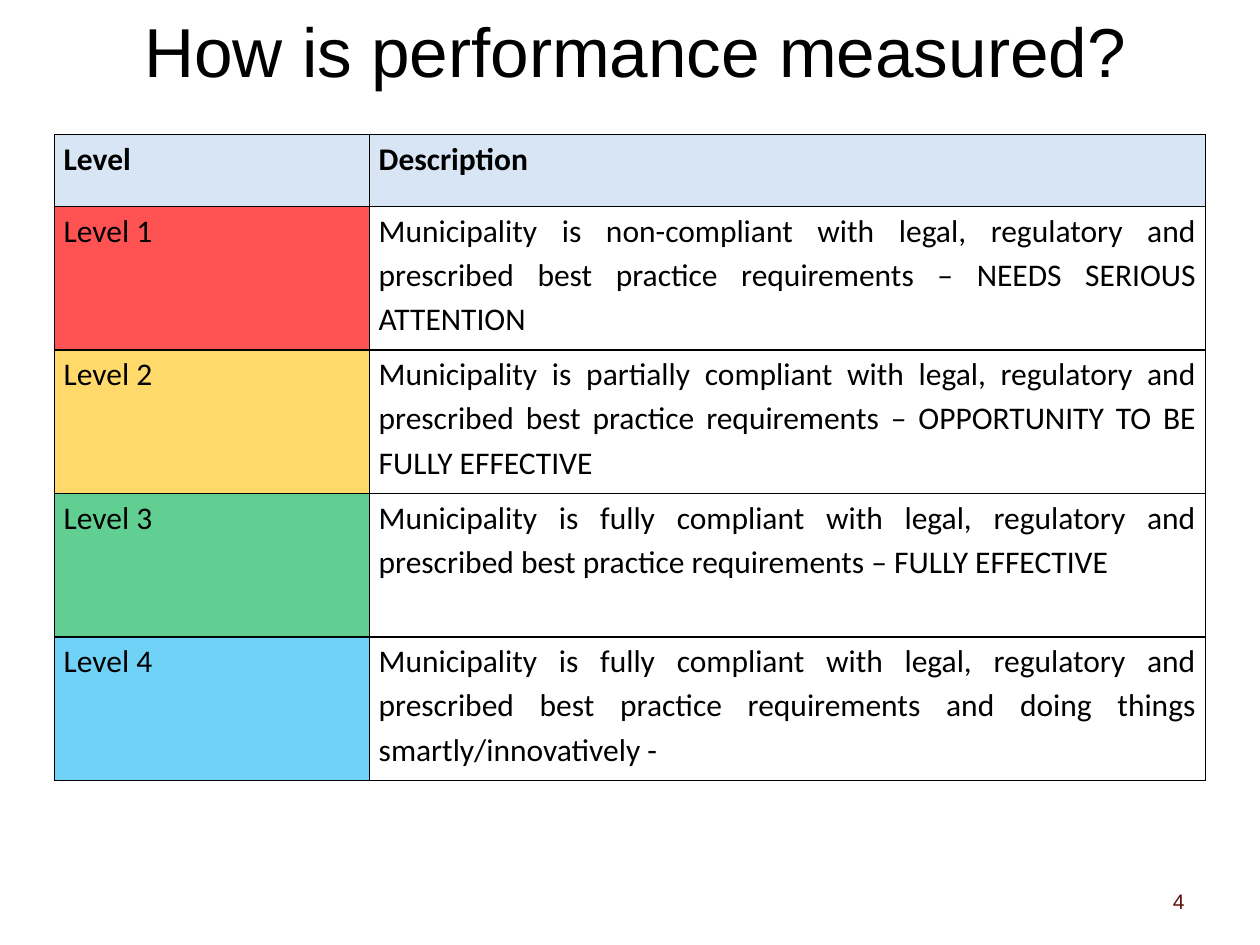
"""Build the slide that explains the four performance levels."""
from typing import NamedTuple

from lxml.etree import SubElement
from pptx import Presentation
from pptx.dml.color import RGBColor
from pptx.enum.text import MSO_ANCHOR as Anchor, PP_ALIGN as Align
from pptx.oxml.ns import qn
from pptx.util import Pt


class Level(NamedTuple):
    name: str
    description: str
    color: str
    opacity: int


REQUIREMENTS = "compliant with legal, regulatory and prescribed best practice requirements"
HEADER_COLOR, HEADER_OPACITY = "C6D9F1", 67
LEVELS = [
    Level("Level 1", f"Municipality is non-{REQUIREMENTS} – NEEDS SERIOUS ATTENTION", "FF0000", 68),
    Level("Level 2", f"Municipality is partially {REQUIREMENTS} – OPPORTUNITY TO BE FULLY EFFECTIVE", "FFC000", 59),
    Level("Level 3", f"Municipality is fully {REQUIREMENTS} – FULLY EFFECTIVE", "00B050", 62),
    Level("Level 4", f"Municipality is fully {REQUIREMENTS} and doing things smartly/innovatively - ", "00B0F0", 56),
]
COLUMN_WIDTHS = [180, 478]
ROW_HEIGHTS = [41] + [82] * len(LEVELS)


def rgb(color: str) -> RGBColor:
    return RGBColor.from_string(color)


def style_text(frame, font_name: str, size: float, color: str, align: Align, bold: bool = False) -> None:
    frame.word_wrap = True
    paragraph = frame.paragraphs[0]
    paragraph.alignment = align
    for run in paragraph.runs:
        run.font.name = font_name
        run.font.size = Pt(size)
        run.font.bold = bold
        run.font.color.rgb = rgb(color)


def place(box, left: float, top: float, width: float, height: float) -> None:
    box.left, box.top, box.width, box.height = Pt(left), Pt(top), Pt(width), Pt(height)


def add_borders(cell) -> None:
    properties = cell._tc.get_or_add_tcPr()
    for side in ("a:lnL", "a:lnR", "a:lnT", "a:lnB"):
        border = SubElement(properties, qn(side), w=str(Pt(1)))
        SubElement(SubElement(border, qn("a:solidFill")), qn("a:srgbClr"), val="000000")


def fill_cell(cell, color: str, opacity: int) -> None:
    cell.fill.solid()
    cell.fill.fore_color.rgb = rgb(color)
    tint = cell._tc.tcPr.find(qn("a:solidFill")).find(qn("a:srgbClr"))
    SubElement(tint, qn("a:alpha"), val=str(opacity * 1000))


def write_cell(cell, wording: str, bold: bool = False) -> None:
    cell.margin_left = cell.margin_right = Pt(5.4)
    cell.margin_top = cell.margin_bottom = 0
    cell.text_frame.text = wording
    style_text(cell.text_frame, "Calibri", 18, "000000", Align.JUSTIFY, bold)
    paragraph = cell.text_frame.paragraphs[0]
    paragraph.line_spacing = 1.15
    paragraph.space_after = Pt(10)
    add_borders(cell)
    cell.fill.background()


def add_level_table(slide) -> None:
    grid = slide.shapes.add_table(
        len(ROW_HEIGHTS), len(COLUMN_WIDTHS), Pt(31), Pt(77), Pt(sum(COLUMN_WIDTHS)), Pt(sum(ROW_HEIGHTS))
    ).table
    grid.horz_banding = False
    for column, width in zip(grid.columns, COLUMN_WIDTHS):
        column.width = Pt(width)
    for row, height in zip(grid.rows, ROW_HEIGHTS):
        row.height = Pt(height)
    for index, heading in enumerate(("Level", "Description")):
        write_cell(grid.cell(0, index), heading, bold=True)
        fill_cell(grid.cell(0, index), HEADER_COLOR, HEADER_OPACITY)
    for index, level in enumerate(LEVELS, start=1):
        write_cell(grid.cell(index, 0), level.name)
        fill_cell(grid.cell(index, 0), level.color, level.opacity)
        write_cell(grid.cell(index, 1), level.description)


def main() -> None:
    deck = Presentation()
    deck.slide_width, deck.slide_height = Pt(720), Pt(540)
    slide = deck.slides.add_slide(deck.slide_layouts[5])

    title = slide.shapes.title
    place(title, 20, 2, 686, 53)
    title.text_frame.text = "How is performance measured?"
    title.text_frame.vertical_anchor = Anchor.MIDDLE
    style_text(title.text_frame, "Arial", 39.6, "000000", Align.CENTER)

    page_number = slide.shapes.add_textbox(Pt(516), Pt(500.5), Pt(168), Pt(29))
    page_number.text_frame.text = "4"
    page_number.text_frame.vertical_anchor = Anchor.MIDDLE
    style_text(page_number.text_frame, "Arial", 12, "5C120E", Align.RIGHT)

    add_level_table(slide)
    deck.save("out.pptx")


if __name__ == "__main__":
    main()
